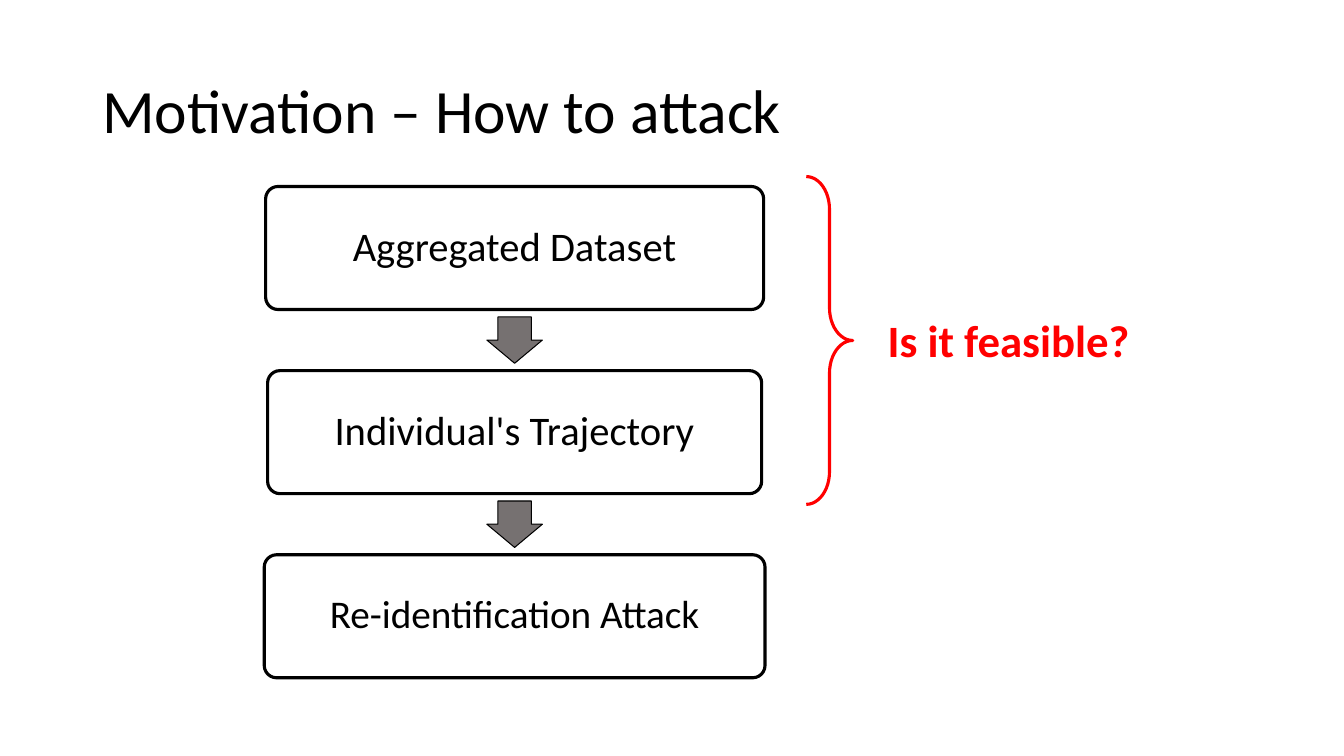
"""Build the slide that shows the steps of the attack and asks if it is feasible."""
from pptx import Presentation
from pptx.dml.color import RGBColor
from pptx.enum.shapes import MSO_SHAPE
from pptx.enum.text import MSO_ANCHOR, PP_ALIGN
from pptx.util import Cm, Pt

ROUNDED, ARROW, BRACE = (
    MSO_SHAPE.ROUNDED_RECTANGLE, MSO_SHAPE.DOWN_ARROW, MSO_SHAPE.RIGHT_BRACE)
MIDDLE, TOP = MSO_ANCHOR.MIDDLE, MSO_ANCHOR.TOP
LEFT, CENTER = PP_ALIGN.LEFT, PP_ALIGN.CENTER

TITLE = "Motivation – How to attack"
STEPS = [
    ("Aggregated Dataset", 12.55, 29),
    ("Individual's Trajectory", 12.45, 29),
    ("Re-identification Attack", 12.62, 28),
]
QUESTION = "Is it feasible?"

FONT = "Calibri"
BLACK, GRAY, RED = "000000", "767171", "FF0000"

STEP_CENTER, STEP_TOP, STEP_HEIGHT, STEP_PITCH = 12.97, 4.7, 3.1, 4.64
STEP_INSET = 0.4
ARROW_WIDTH, ARROW_HEIGHT = 1.4, 1.17


def color(value):
    return RGBColor.from_string(value)


def add_outline(kind, box, adjustments, line, weight, fill=None):
    shape = slide.shapes.add_shape(kind, *map(Cm, box))
    shape.shadow.inherit = False
    for index, value in enumerate(adjustments):
        shape.adjustments[index] = value
    if fill:
        shape.fill.solid()
        shape.fill.fore_color.rgb = color(fill)
    else:
        shape.fill.background()
    shape.line.color.rgb = color(line)
    shape.line.width = Pt(weight)
    return shape


def write(frame, text, size, ink, align=LEFT, anchor=MIDDLE, bold=False,
          spacing=0.9, wrap=True):
    frame.word_wrap = wrap
    frame.vertical_anchor = anchor
    paragraph = frame.paragraphs[0]
    paragraph.text = text
    paragraph.alignment = align
    paragraph.line_spacing = spacing
    paragraph.font.name = FONT
    paragraph.font.size = Pt(size)
    paragraph.font.bold = bold
    paragraph.font.color.rgb = color(ink)


deck = Presentation()
deck.slide_width, deck.slide_height = Cm(33.87), Cm(19.05)
slide = deck.slides.add_slide(deck.slide_layouts[6])

title = slide.shapes.add_textbox(Cm(2.33), Cm(1.01), Cm(29.21), Cm(3.68))
write(title.text_frame, TITLE, 44, BLACK)

for row, (label, width, size) in enumerate(STEPS):
    top = STEP_TOP + row * STEP_PITCH
    if row:
        gap_center = top - (STEP_PITCH - STEP_HEIGHT) / 2
        add_outline(
            ARROW,
            (STEP_CENTER - ARROW_WIDTH / 2, gap_center - ARROW_HEIGHT / 2,
             ARROW_WIDTH, ARROW_HEIGHT),
            (0.6, 0.5), BLACK, 0.75, GRAY)
    step = add_outline(
        ROUNDED, (STEP_CENTER - width / 2, top, width, STEP_HEIGHT),
        (0.1,), BLACK, 2.25)
    frame = step.text_frame
    frame.margin_left = frame.margin_right = Cm(STEP_INSET)
    frame.margin_top = frame.margin_bottom = Cm(STEP_INSET)
    write(frame, label, size, BLACK, CENTER)

add_outline(BRACE, (20.32, 4.45, 1.17, 8.26), (0.704, 0.5), RED, 2.25)
question = slide.shapes.add_textbox(Cm(22.12), Cm(7.75), Cm(6.88), Cm(1.63))
write(question.text_frame, QUESTION, 32, RED, anchor=TOP, bold=True,
      spacing=1.0, wrap=False)

deck.save("out.pptx")
